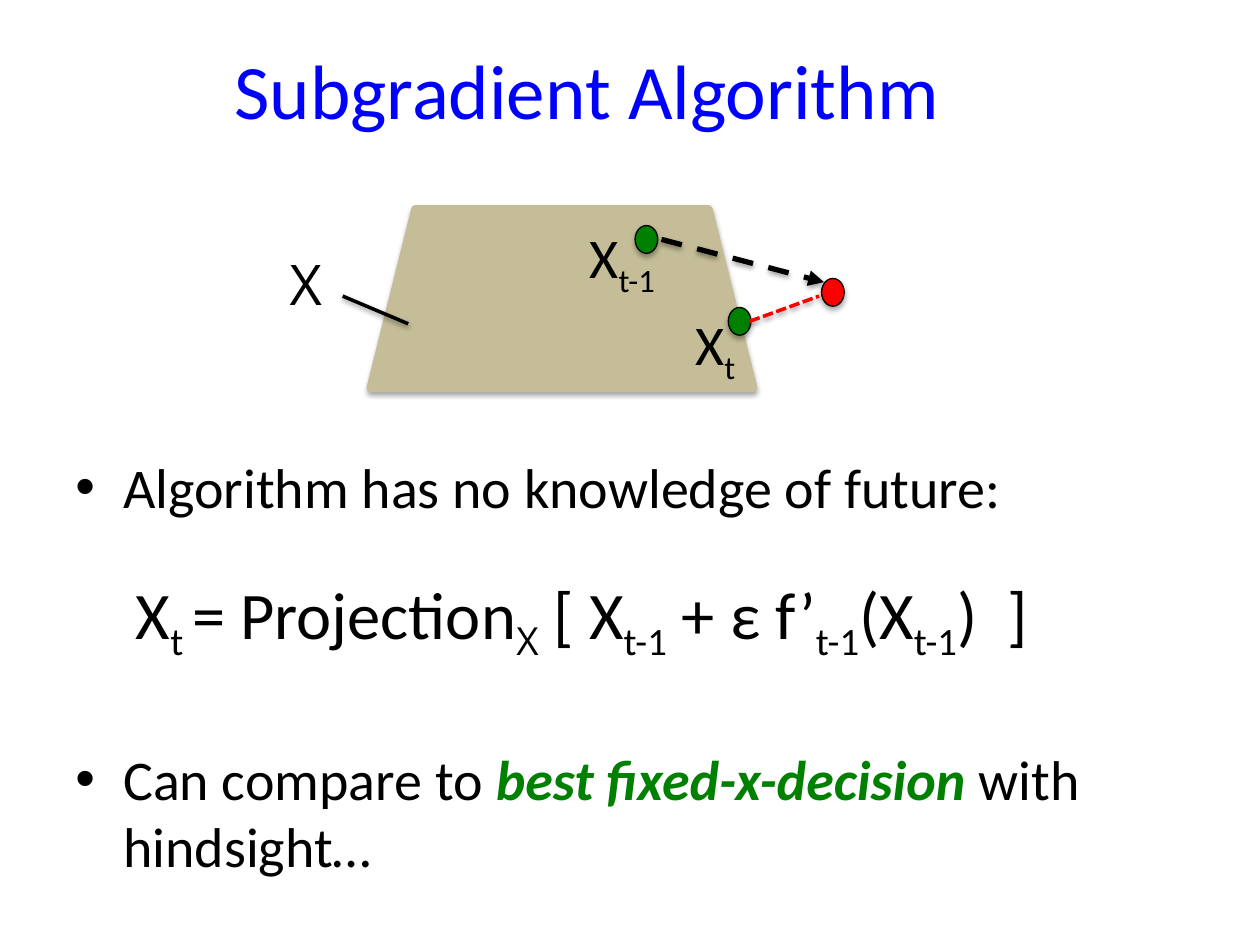
import dataclasses
import typing

import pptx
import pptx.dml.color
import pptx.enum.dml
import pptx.enum.shapes
import pptx.enum.text
import pptx.oxml
import pptx.oxml.ns
import pptx.util

Inches = pptx.util.Inches
Pt = pptx.util.Pt
Dash = pptx.enum.dml.MSO_LINE
Preset = pptx.enum.shapes.MSO_SHAPE

COLORS = {
    "title": "0000FF",
    "text": "000000",
    "emphasis": "008000",
    "region": "C4BD97",
    "iterate": "008000",
    "outside": "FF0000",
}
DRAWING_NS = pptx.oxml.ns.nsdecls("a")
DOT_WIDTH, DOT_HEIGHT = 0.18, 0.22


@dataclasses.dataclass
class Span:
    text: str
    subscript: bool = False
    font: str = "Calibri"
    color: str = "text"
    strong: bool = False
    spacing: float = 0


@dataclasses.dataclass
class Paragraph:
    spans: list[Span]
    size: float = 32
    bullet: bool = False
    indent: float = 0
    space_before: float = 0


@dataclasses.dataclass
class Segment:
    start: tuple[float, float]
    end: tuple[float, float]
    width: float
    color: str = "text"
    dash: typing.Any = None
    arrow: bool = False


@dataclasses.dataclass
class Label:
    frame: tuple[float, float, float, float]
    spans: list[Span]


def rgb(name: str):
    return pptx.dml.color.RGBColor.from_string(COLORS[name])


def sub(text: str, font: str = "Calibri") -> Span:
    return Span(text, subscript=True, font=font)


def add_shadow(shape, opacity: int = 35, distance: float = 1.8) -> None:
    """Cast a soft black shadow straight down; call after the line is set."""
    shape._element.spPr.append(pptx.oxml.parse_xml(
        f'<a:effectLst {DRAWING_NS}><a:outerShdw blurRad="{Pt(3.1)}" '
        f'dist="{Pt(distance)}" dir="5400000" rotWithShape="0">'
        f'<a:srgbClr val="000000"><a:alpha val="{opacity * 1000}"/></a:srgbClr>'
        f'</a:outerShdw></a:effectLst>'))


def add_text(slide, frame, paragraphs: list[Paragraph], *, wrap: bool = True,
             anchor=pptx.enum.text.MSO_ANCHOR.TOP,
             align=pptx.enum.text.PP_ALIGN.LEFT) -> None:
    box = slide.shapes.add_textbox(*map(Inches, frame))
    text_frame = box.text_frame
    text_frame.word_wrap = wrap
    text_frame.vertical_anchor = anchor
    for index, paragraph in enumerate(paragraphs):
        para = text_frame.paragraphs[0] if index == 0 else text_frame.add_paragraph()
        para.alignment = align
        para.space_before = Pt(paragraph.space_before)
        properties = para._p.get_or_add_pPr()
        properties.set("marL", str(Inches(paragraph.indent)))
        if paragraph.bullet:
            properties.set("indent", str(-Inches(paragraph.indent)))
            properties.append(pptx.oxml.parse_xml(
                f'<a:buFont {DRAWING_NS} typeface="Arial"/>'))
            properties.append(pptx.oxml.parse_xml(
                f'<a:buChar {DRAWING_NS} char="•"/>'))
        for part in paragraph.spans:
            span = para.add_run()
            span.text = part.text
            span.font.name = part.font
            span.font.size = Pt(paragraph.size)
            span.font.color.rgb = rgb(part.color)
            span.font.bold = span.font.italic = part.strong
            if part.subscript:
                span.font._element.set("baseline", "-25000")
            if part.spacing:
                span.font._element.set("spc", str(round(part.spacing * 100)))


def add_filled_shape(slide, preset, frame, fill: str, line: str,
                     line_width: float) -> None:
    shape = slide.shapes.add_shape(preset, *map(Inches, frame))
    shape.fill.solid()
    shape.fill.fore_color.rgb = rgb(fill)
    shape.line.color.rgb = rgb(line)
    shape.line.width = Pt(line_width)
    add_shadow(shape)


def add_segment(slide, segment: Segment) -> None:
    connector = slide.shapes.add_connector(
        pptx.enum.shapes.MSO_CONNECTOR.STRAIGHT,
        *map(Inches, segment.start + segment.end))
    connector.line.color.rgb = rgb(segment.color)
    connector.line.width = Pt(segment.width)
    if segment.dash is not None:
        connector.line.dash_style = segment.dash
    if segment.arrow:
        connector.line._get_or_add_ln().append(pptx.oxml.parse_xml(
            f'<a:tailEnd {DRAWING_NS} type="triangle"/>'))
    add_shadow(connector, opacity=38, distance=1.6)


BODY = [
    Paragraph([Span("Algorithm has no knowledge of future:")],
              bullet=True, indent=0.38),
    Paragraph([
        Span("X"), sub("t "), Span("= Projection"), sub("X", font="Open Sans"),
        Span(" [ X"), sub("t-1"), Span(" + ε f’"), sub("t-1"),
        Span("(X"), sub("t-1"), Span(")"), Span(" ", spacing=8.6), Span("]"),
    ], size=38, indent=0.48, space_before=30.5),
    Paragraph([
        Span("Can compare to "),
        Span("best fixed-x-decision ", color="emphasis", strong=True),
        Span("with hindsight…"),
    ], bullet=True, indent=0.38, space_before=46),
]
LABELS = [
    Label((2.2, 1.93, 0.62, 0.64), [Span("X", font="Open Sans")]),
    Label((4.58, 1.72, 0.78, 0.64), [Span("X"), sub("t-1")]),
    Label((5.42, 2.41, 0.54, 0.64), [Span("X"), sub("t")]),
]
DOTS = [(5.04, 1.79, "iterate"), (5.78, 2.44, "iterate"), (6.52, 2.21, "outside")]
SEGMENTS = [
    Segment((2.72, 2.35), (3.24, 2.57), 2),
    Segment((5.95, 2.55), (6.5, 2.35), 2, color="outside", dash=Dash.SQUARE_DOT),
    Segment((5.25, 1.9), (6.54, 2.24), 3, dash=Dash.DASH, arrow=True),
]


def main() -> None:
    deck = pptx.Presentation()
    deck.slide_width, deck.slide_height = Inches(10), Inches(7.5)
    slide = deck.slides.add_slide(deck.slide_layouts[6])

    add_text(slide, (0.16, 0.08, 9, 1.25),
             [Paragraph([Span("Subgradient Algorithm", color="title")], size=44)],
             anchor=pptx.enum.text.MSO_ANCHOR.MIDDLE,
             align=pptx.enum.text.PP_ALIGN.CENTER)
    add_text(slide, (0.5, 3.54, 9, 3.55), BODY)

    add_filled_shape(slide, Preset.TRAPEZOID, (2.94, 1.66, 3.04, 1.42),
                     "region", "region", 4.5)
    for left, top, color in DOTS:
        add_filled_shape(slide, Preset.OVAL, (left, top, DOT_WIDTH, DOT_HEIGHT),
                         color, "text", 0.75)
    for segment in SEGMENTS:
        add_segment(slide, segment)
    for label in LABELS:
        add_text(slide, label.frame, [Paragraph(label.spans)], wrap=False)

    deck.save("out.pptx")


if __name__ == "__main__":
    main()
